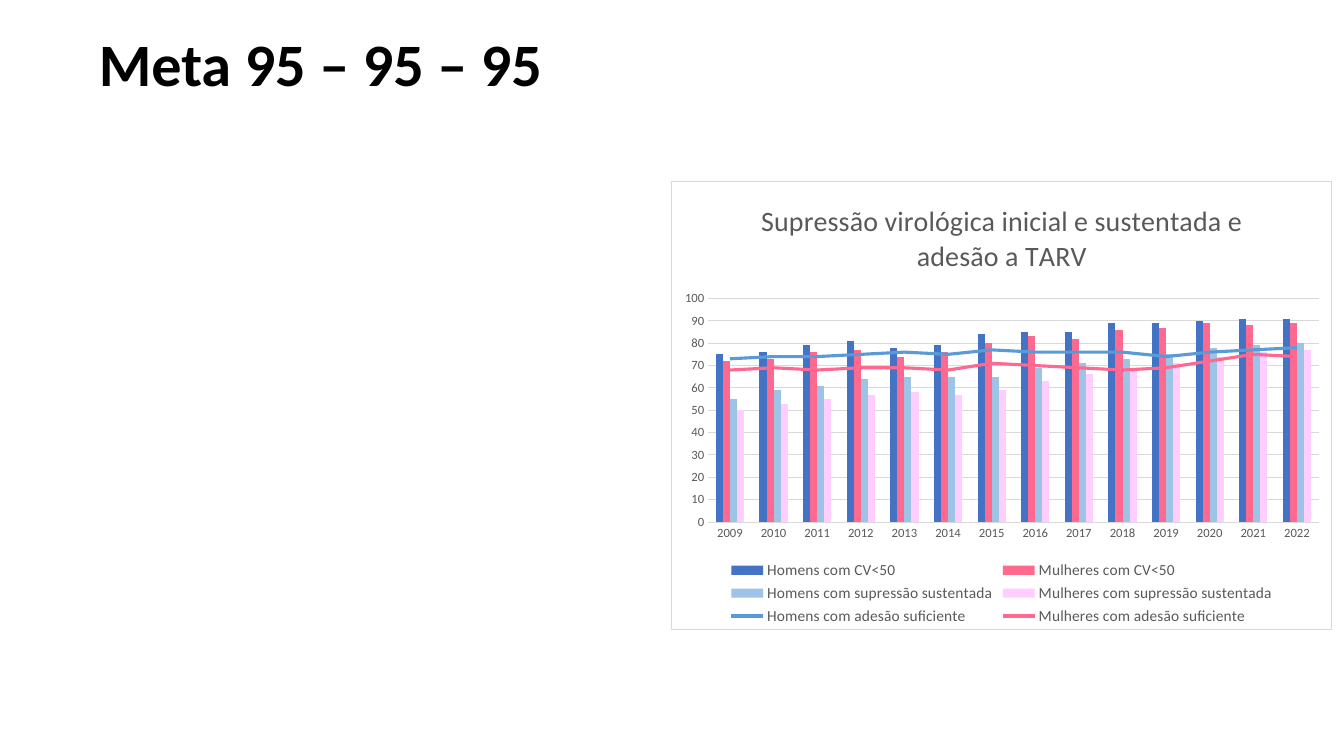
from lxml import etree
from pptx import Presentation
from pptx.chart.data import CategoryChartData
from pptx.dml.color import RGBColor
from pptx.enum.chart import XL_CHART_TYPE, XL_LEGEND_POSITION, XL_MARKER_STYLE, XL_TICK_MARK
from pptx.enum.text import MSO_ANCHOR, MSO_AUTO_SIZE, PP_ALIGN
from pptx.oxml import parse_xml
from pptx.oxml.ns import nsdecls, qn
from pptx.util import Pt

COLUMN = XL_CHART_TYPE.COLUMN_CLUSTERED
BOTTOM = XL_LEGEND_POSITION.BOTTOM
PLAIN = XL_MARKER_STYLE.NONE
NO_TICK = XL_TICK_MARK.NONE
MIDDLE = MSO_ANCHOR.MIDDLE
FIXED = MSO_AUTO_SIZE.NONE
LEFT = PP_ALIGN.LEFT

FACE = "Calibri"
GREY = "595959"
RULE = "D9D9D9"
BARS = [
    ("Homens com CV<50", "4472C4",
     [75, 76, 79, 81, 78, 79, 84, 85, 85, 89, 89, 90, 91, 91]),
    ("Mulheres com CV<50", "FF6990",
     [72, 73, 76, 77, 74, 76, 80, 83, 82, 86, 87, 89, 88, 89]),
    ("Homens com supressão sustentada", "9DC3E6",
     [55, 59, 61, 64, 65, 65, 65, 69, 71, 73, 75, 78, 79, 80]),
    ("Mulheres com supressão sustentada", "FFCDFF",
     [50, 53, 55, 57, 58, 57, 59, 63, 66, 68, 71, 74, 76, 77]),
]
LINES = [
    ("Homens com adesão suficiente", "5B9BD5",
     [73, 74, 74, 75, 76, 75, 77, 76, 76, 76, 74, 76, 77, 78]),
    ("Mulheres com adesão suficiente", "FF6990",
     [68, 69, 68, 69, 69, 68, 71, 70, 69, 68, 69, 72, 75, 74]),
]


def rgb(code):
    return RGBColor.from_string(code)


def set_font(font, size, color=GREY, bold=False):
    font.name = FACE
    font.size = Pt(size)
    font.bold = bold
    font.color.rgb = rgb(color)


def set_line(line, color, width):
    line.color.rgb = rgb(color)
    line.width = Pt(width)


def add_title(slide, text):
    title = slide.shapes.title
    title.left, title.top = Pt(63.4), Pt(11.5)
    title.width, title.height = Pt(827.3), Pt(73.4)
    frame = title.text_frame
    frame.text = text
    frame.auto_size = FIXED
    frame.vertical_anchor = MIDDLE
    para = frame.paragraphs[0]
    para.alignment = LEFT
    para.line_spacing = 0.9
    set_font(para.font, 43, "000000", True)


def split_lines(chart, count):
    bar = chart._chartSpace.find(".//" + qn("c:barChart"))
    plot = parse_xml(
        f'<c:lineChart {nsdecls("c")}><c:grouping val="standard"/>'
        '<c:varyColors val="0"/></c:lineChart>')
    for ser in bar.findall(qn("c:ser"))[-count:]:
        for flag in ser.findall(qn("c:invertIfNegative")):
            ser.remove(flag)
        plot.append(ser)
    etree.SubElement(plot, qn("c:marker")).set("val", "1")
    for axis in bar.findall(qn("c:axId")):
        etree.SubElement(plot, qn("c:axId")).set("val", axis.get("val"))
    bar.addnext(plot)


def add_frame(chart):
    chart._chartSpace.find(qn("c:chart")).addnext(parse_xml(
        f'<c:spPr {nsdecls("c", "a")}>'
        '<a:solidFill><a:srgbClr val="FFFFFF"/></a:solidFill>'
        f'<a:ln w="{Pt(0.75)}"><a:solidFill><a:srgbClr val="{RULE}"/>'
        '</a:solidFill></a:ln></c:spPr>'))


def style_axes(chart):
    years, scale = chart.category_axis, chart.value_axis
    for axis in (years, scale):
        axis.major_tick_mark = axis.minor_tick_mark = NO_TICK
        set_font(axis.tick_labels.font, 9)
    set_line(years.format.line, RULE, 0.75)
    scale.format.line.fill.background()
    scale.minimum_scale, scale.maximum_scale = 0, 100
    scale.major_unit = 10
    scale.has_major_gridlines = True
    set_line(scale.major_gridlines.format.line, RULE, 0.75)


def style_plots(chart):
    bars, lines = chart.plots
    bars.vary_by_categories = False
    bars.gap_width, bars.overlap = 219, 0
    for ser, (_, color, _) in zip(bars.series, BARS):
        ser.format.fill.solid()
        ser.format.fill.fore_color.rgb = rgb(color)
    for ser, (_, color, _) in zip(lines.series, LINES):
        set_line(ser.format.line, color, 2.25)
        ser.marker.style = PLAIN
        ser.smooth = False


def add_chart(slide, title):
    data = CategoryChartData()
    data.categories = [str(year) for year in range(2009, 2023)]
    for name, _, values in BARS + LINES:
        data.add_series(name, values)
    chart = slide.shapes.add_chart(
        COLUMN, Pt(479.5), Pt(129.6), Pt(472.3), Pt(320.4), data).chart
    set_font(chart.font, 10, "000000")
    add_frame(chart)
    split_lines(chart, len(LINES))
    style_plots(chart)
    style_axes(chart)
    chart.has_title = True
    frame = chart.chart_title.text_frame
    frame.text = title
    set_font(frame.paragraphs[0].font, 20)
    chart.chart_title.include_in_layout = False
    chart.has_legend = True
    chart.legend.position = BOTTOM
    chart.legend.include_in_layout = False
    set_font(chart.legend.font, 11)


def main():
    deck = Presentation()
    deck.slide_width, deck.slide_height = Pt(960), Pt(540)
    slide = deck.slides.add_slide(deck.slide_layouts[5])
    add_title(slide, "Meta 95 – 95 – 95")
    add_chart(slide, "Supressão virológica inicial e sustentada e adesão a TARV")
    deck.save("out.pptx")


if __name__ == "__main__":
    main()
